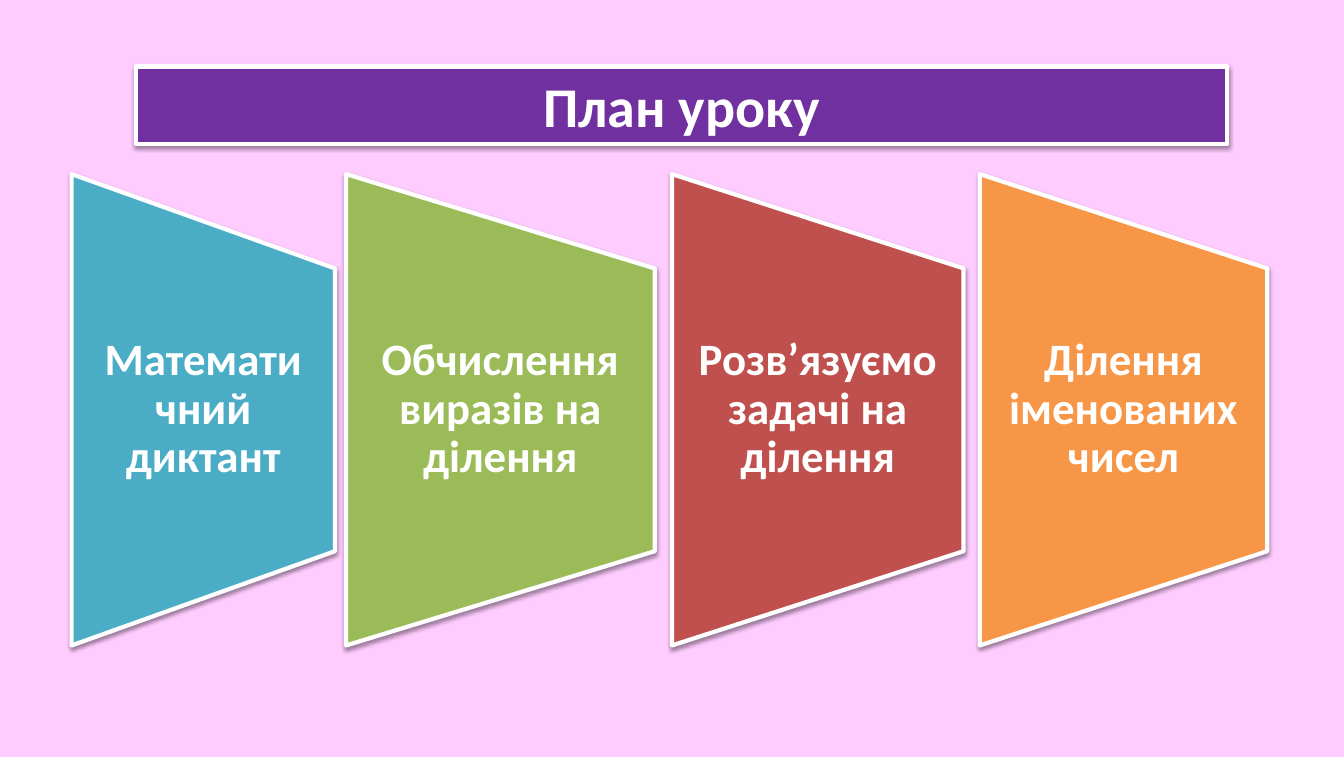
"""Build the lesson plan slide with a title bar and four tapered steps."""
from dataclasses import dataclass
from typing import Any

from lxml.etree import SubElement as Sub
from pptx import Presentation as Deck
from pptx.dml.color import RGBColor as Color
from pptx.enum.shapes import MSO_SHAPE as Kind
from pptx.enum.text import MSO_ANCHOR as Anchor, MSO_AUTO_SIZE as Fit, PP_ALIGN as Align
from pptx.oxml.ns import qn
from pptx.util import Inches, Pt


@dataclass(frozen=True)
class Theme:
    back: str = "FFCCFF"
    bar: str = "7030A0"
    light: str = "FFFFFF"
    shade: str = "000000"
    font: str = "Calibri"
    head: int = 40
    body: int = 32
    edge: int = 3


@dataclass(frozen=True)
class Step:
    left: float
    width: float
    fill: str
    text: str


THEME = Theme()
MID, TALL, TEXT = 4.06, 4.67, 2.8
STEPS = [
    Step(0.71, 2.61, "4BACC6", "Математичний диктант"),
    Step(3.43, 3.06, "9BBB59", "Обчислення виразів на ділення"),
    Step(6.66, 2.89, "C0504D", "Розв’язуємо задачі на ділення"),
    Step(9.71, 2.85, "F79646", "Ділення іменованих чисел"),
]


def apply(item: Any, form: dict[str, Any]) -> None:
    for name, value in form.items():
        setattr(item, name, value)


def paint(shape: Any, fill: str) -> None:
    shape.fill.solid()
    shape.fill.fore_color.rgb = Color.from_string(fill)
    shape.line.color.rgb = Color.from_string(THEME.light)
    shape.line.width = Pt(THEME.edge)
    shape.shadow.inherit = False
    glow = shape.element.spPr.find(qn("a:effectLst"))
    cast = Sub(glow, qn("a:outerShdw"), blurRad=str(Pt(3.1)), dist=str(Pt(1.6)),
               dir="5400000", rotWithShape="0")
    tint = Sub(cast, qn("a:srgbClr"), val=THEME.shade)
    Sub(tint, qn("a:alpha"), val="38000")


def write(shape: Any, text: str, size: int, frame: dict[str, Any], gap: float) -> None:
    box = shape.text_frame
    apply(box, {"word_wrap": True, "auto_size": Fit.NONE, **frame})
    box.text = text
    para = box.paragraphs[0]
    apply(para, {"alignment": Align.CENTER, "line_spacing": gap})
    font = para.runs[0].font
    apply(font, {"name": THEME.font, "size": Pt(size), "bold": True})
    font.color.rgb = Color.from_string(THEME.light)


def draw(slide: Any, step: Step) -> None:
    shape = slide.shapes.add_shape(
        Kind.FLOWCHART_MANUAL_OPERATION,
        Inches(step.left + (step.width - TALL) / 2), Inches(MID - step.width / 2),
        Inches(TALL), Inches(step.width))
    shape.rotation = 270
    paint(shape, step.fill)
    label = slide.shapes.add_textbox(
        Inches(step.left), Inches(MID - TEXT / 2), Inches(step.width), Inches(TEXT))
    side = Inches(0.22)
    frame = {"vertical_anchor": Anchor.MIDDLE, "margin_left": side,
             "margin_right": side, "margin_top": 0, "margin_bottom": 0}
    write(label, step.text, THEME.body, frame, 0.9)


def main() -> None:
    deck = Deck()
    apply(deck, {"slide_width": Inches(13.32), "slide_height": Inches(7.5)})
    slide = deck.slides.add_slide(deck.slide_layouts[5])
    back = slide.background.fill
    back.solid()
    back.fore_color.rgb = Color.from_string(THEME.back)
    title = slide.shapes.title
    apply(title, {"left": Inches(1.35), "top": Inches(0.66),
                  "width": Inches(10.81), "height": Inches(0.77)})
    paint(title, THEME.bar)
    write(title, "План уроку", THEME.head, {"vertical_anchor": Anchor.TOP}, 1.0)
    for step in STEPS:
        draw(slide, step)
    deck.save("out.pptx")


if __name__ == "__main__":
    main()
